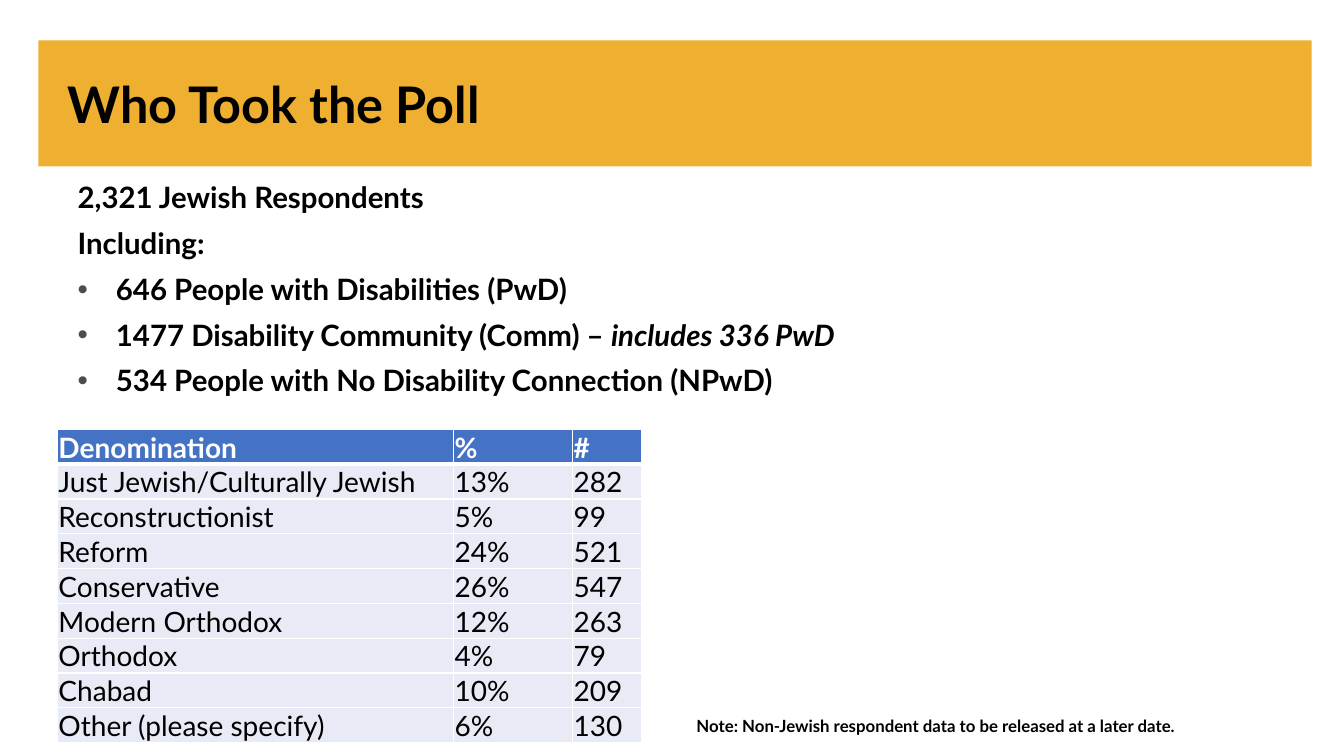
from lxml.etree import SubElement
from pptx import Presentation
from pptx.dml.color import RGBColor
from pptx.enum.shapes import MSO_SHAPE
from pptx.enum.text import MSO_ANCHOR as Anchor, MSO_AUTO_SIZE as Fit, PP_ALIGN as Align
from pptx.oxml.ns import qn
from pptx.util import Inches, Pt

COLORS = {"band": "EFAF30", "head": "4472C4", "row": "E8EBF5",
          "ink": "000000", "paper": "FFFFFF", "dot": "4D4D4D"}

POINTS = [  # bulleted, plain part, italic part
    (False, "2,321 Jewish Respondents", ""),
    (False, "Including:", ""),
    (True, "646 People with Disabilities (PwD)", ""),
    (True, "1477 Disability Community (Comm) – ", "includes 336 PwD"),
    (True, "534 People with No Disability Connection (NPwD)", ""),
]

ROWS = [
    ("Denomination", "%", "#"),
    ("Just Jewish/Culturally Jewish", "13%", "282"),
    ("Reconstructionist", "5%", "99"),
    ("Reform", "24%", "521"),
    ("Conservative", "26%", "547"),
    ("Modern Orthodox", "12%", "263"),
    ("Orthodox", "4%", "79"),
    ("Chabad", "10%", "209"),
    ("Other (please specify)", "6%", "130"),
]
COLS = (3.93, 1.18, 0.68)


def color(name):
    return RGBColor.from_string(COLORS[name])


def style(para, size, ink="ink", bold=True):
    font = para.font
    font.name, font.size, font.bold = "Lato", Pt(size), bold
    font.color.rgb = color(ink)


def place(shape, left, top, width, height):
    shape.left, shape.top = Inches(left), Inches(top)
    shape.width, shape.height = Inches(width), Inches(height)


def bullet(para, shown):
    """Give the paragraph a grey dot with a hanging indent, or no dot."""
    props = para._p.get_or_add_pPr()
    props.set("marL", str(Inches(0.5 if shown else 0.12)))
    props.set("indent", str(Inches(-0.38 if shown else 0)))
    if not shown:
        SubElement(props, qn("a:buNone"))
        return
    tint = SubElement(props, qn("a:buClr"))
    SubElement(tint, qn("a:srgbClr"), val=COLORS["dot"])
    SubElement(props, qn("a:buFont"), typeface="Arial")
    SubElement(props, qn("a:buChar"), char="•")


def add_header(slide, left, top, width, height):
    band = slide.shapes.add_shape(MSO_SHAPE.RECTANGLE, 0, 0, 0, 0)
    place(band, left, top, width, height)
    band.shadow.inherit = False
    band.fill.solid()
    band.fill.fore_color.rgb = color("band")
    band.line.fill.background()
    slide.shapes._spTree.insert(2, band._element)  # behind the title

    title = slide.shapes.title
    place(title, left + 0.19, top, 11.5, height)
    frame = title.text_frame
    frame.text = "Who Took the Poll"
    frame.auto_size, frame.vertical_anchor = Fit.NONE, Anchor.MIDDLE
    frame.paragraphs[0].alignment = Align.LEFT
    style(frame.paragraphs[0], 36)


def add_points(slide, left, top, width, height):
    body = slide.placeholders[1]
    place(body, left, top, width, height)
    frame = body.text_frame
    frame.auto_size = Fit.NONE
    for i, (dotted, plain, slanted) in enumerate(POINTS):
        para = frame.add_paragraph() if i else frame.paragraphs[0]
        bullet(para, dotted)
        para.line_spacing = 0.9
        para.space_before = Pt(10 if i else 0)
        style(para, 21)
        para.add_run().text = plain
        if slanted:
            run = para.add_run()
            run.text = slanted
            run.font.italic = True


def add_borders(cell, bottom):
    props = cell._tc.get_or_add_tcPr()
    for i, side in enumerate(("lnL", "lnR", "lnT", "lnB")):
        width = bottom if side == "lnB" else 1
        line = props.makeelement(qn(f"a:{side}"), {"w": str(Pt(width))})
        fill = SubElement(line, qn("a:solidFill"))
        SubElement(fill, qn("a:srgbClr"), val=COLORS["paper"])
        props.insert(i, line)


def add_counts(slide, left, top, height):
    frame = slide.shapes.add_table(len(ROWS), len(COLS), Inches(left), Inches(top),
                                   Inches(sum(COLS)), Inches(height * len(ROWS)))
    table = frame.table
    for col, width in zip(table.columns, COLS):
        col.width = Inches(width)
    for r, row in enumerate(ROWS):
        head = r == 0
        for c, text in enumerate(row):
            cell = table.cell(r, c)
            cell.text = text
            cell.margin_left = cell.margin_right = cell.margin_top = Inches(0.01)
            cell.margin_bottom = 0
            cell.vertical_anchor = Anchor.MIDDLE if c else Anchor.BOTTOM
            cell.fill.solid()
            cell.fill.fore_color.rgb = color("head" if head else "row")
            add_borders(cell, 3 if head else 1)
            style(cell.text_frame.paragraphs[0], 20, "paper" if head else "ink", head)


def add_note(slide, left, top, width, height):
    box = slide.shapes.add_textbox(0, 0, 0, 0)
    place(box, left, top, width, height)
    frame = box.text_frame
    frame.word_wrap = True
    frame.text = "Note: Non-Jewish respondent data to be released at a later date."
    style(frame.paragraphs[0], 12)


def main():
    deck = Presentation()
    deck.slide_width, deck.slide_height = Inches(13.33), Inches(7.5)
    slide = deck.slides.add_slide(deck.slide_layouts[1])
    add_header(slide, 0.38, 0.4, 12.63, 1.25)
    add_points(slide, 0.55, 1.77, 9.14, 2.37)
    add_counts(slide, 0.57, 4.26, 0.34)
    add_note(slide, 6.81, 7.05, 6.67, 0.3)
    deck.save("out.pptx")


if __name__ == "__main__":
    main()
